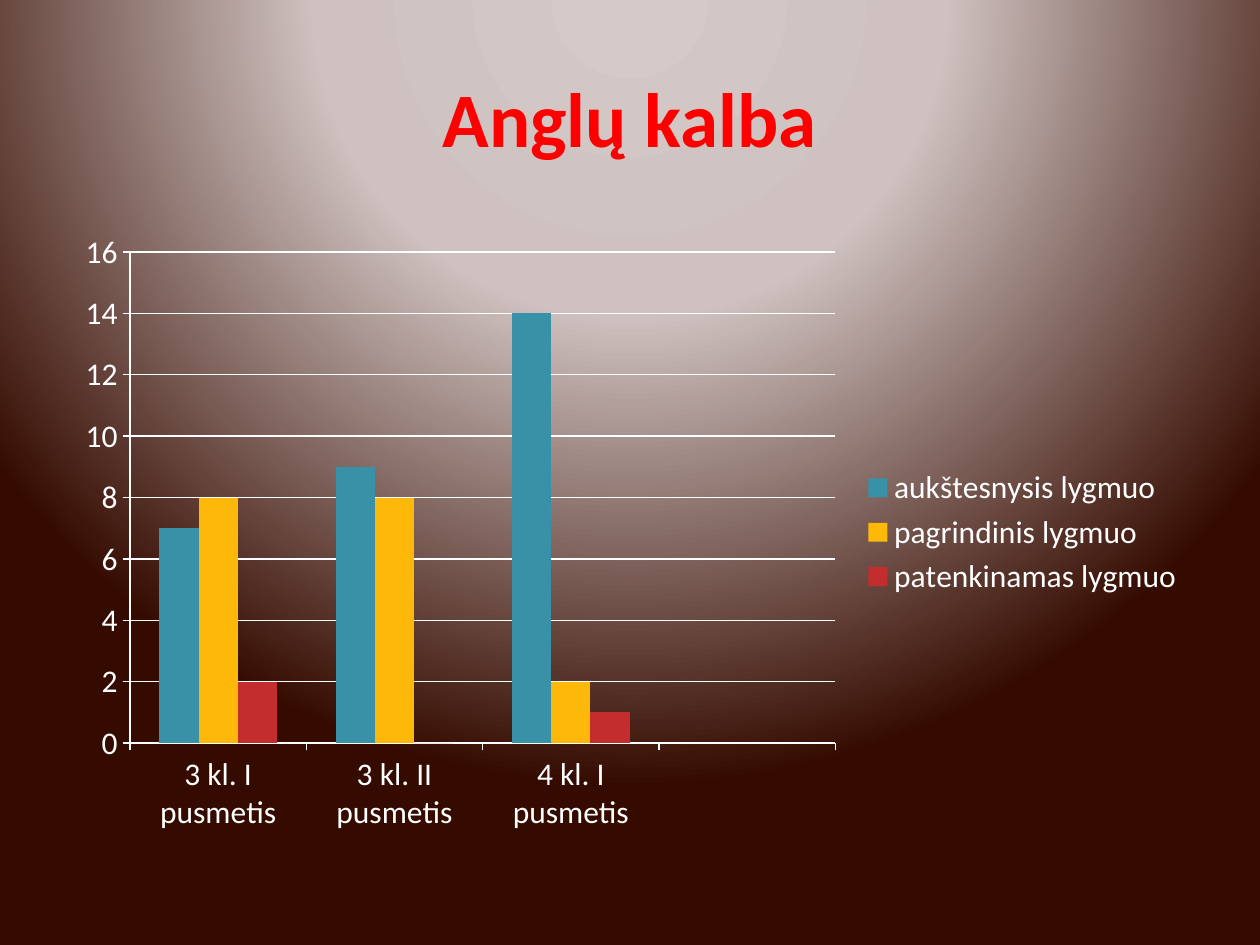
import pptx
import pptx.chart.data
import pptx.dml.color
import pptx.enum.chart
import pptx.enum.text
import pptx.oxml
import pptx.oxml.ns
import pptx.util

Pt = pptx.util.Pt
RGBColor = pptx.dml.color.RGBColor

WHITE = RGBColor(0xFF, 0xFF, 0xFF)
RED = RGBColor(0xFF, 0x00, 0x00)
TEAL = RGBColor(0x38, 0x91, 0xA7)
AMBER = RGBColor(0xFE, 0xB8, 0x0A)
CRIMSON = RGBColor(0xC3, 0x2D, 0x2E)
GLOW = RGBColor(0xD5, 0xCA, 0xC8)
HAZE = RGBColor(0xCE, 0xC1, 0xBF)
BROWN = RGBColor(0x35, 0x0B, 0x00)

FONT = "Calibri"
CATEGORIES = ["3 kl. I pusmetis", "3 kl. II pusmetis", "4 kl. I pusmetis", ""]
LEVELS = [
    ("aukštesnysis lygmuo", (7, 9, 14, None), TEAL),
    ("pagrindinis lygmuo", (8, 8, 2, None), AMBER),
    ("patenkinamas lygmuo", (2, 0, 1, None), CRIMSON),
]


def format_font(font, size, color, bold=False):
    font.name = FONT
    font.size = Pt(size)
    font.bold = bold
    font.color.rgb = color


def set_text(sp, text, size=18, color=WHITE, bold=False,
             align=pptx.enum.text.PP_ALIGN.CENTER):
    tf = sp.text_frame
    tf.vertical_anchor = pptx.enum.text.MSO_ANCHOR.MIDDLE
    p = tf.paragraphs[0]
    p.alignment = align
    r = p.add_run()
    r.text = text
    format_font(r.font, size, color, bold)


def set_background(s, stops):
    """Radial gradient glowing from above the slide."""
    s.background.fill.gradient()
    grad = s.element.find(".//" + pptx.oxml.ns.qn("a:gradFill"))
    stop_xml = "".join(
        f'<a:gs pos="{pos * 1000}"><a:srgbClr val="{color}"/></a:gs>'
        for pos, color in stops)
    grad.getparent().replace(grad, pptx.oxml.parse_xml(
        f'<a:gradFill {pptx.oxml.ns.nsdecls("a")} rotWithShape="1">'
        f'<a:gsLst>{stop_xml}</a:gsLst><a:path path="circle">'
        '<a:fillToRect l="50000" t="-80000" r="50000" b="180000"/>'
        '</a:path></a:gradFill>'))


def add_title(s, text):
    sp = s.shapes.title
    sp.left, sp.top, sp.width, sp.height = Pt(36), Pt(21.6), Pt(648), Pt(90)
    set_text(sp, text, size=44, color=RED, bold=True)


def format_line(line):
    line.color.rgb = WHITE
    line.width = Pt(0.75)


def add_level_chart(s):
    data = pptx.chart.data.CategoryChartData()
    data.categories = CATEGORIES
    for name, values, _ in LEVELS:
        data.add_series(name, values)
    chart = s.shapes.add_chart(
        pptx.enum.chart.XL_CHART_TYPE.COLUMN_CLUSTERED,
        Pt(36), Pt(126), Pt(648), Pt(356.4), data).chart
    chart.has_title = False
    format_font(chart.font, 18, WHITE)

    # Columns
    plot = chart.plots[0]
    plot.gap_width = 150
    plot.overlap = 0
    plot.vary_by_categories = False
    for series, (_, _, color) in zip(plot.series, LEVELS):
        series.format.fill.solid()
        series.format.fill.fore_color.rgb = color

    # Axes
    for axis in (chart.category_axis, chart.value_axis):
        axis.major_tick_mark = pptx.enum.chart.XL_TICK_MARK.OUTSIDE
        format_line(axis.format.line)
    axis = chart.value_axis
    axis.minimum_scale, axis.maximum_scale, axis.major_unit = 0, 16, 2
    axis.has_major_gridlines = True
    format_line(axis.major_gridlines.format.line)

    # Legend
    chart.has_legend = True
    chart.legend.position = pptx.enum.chart.XL_LEGEND_POSITION.RIGHT
    chart.legend.include_in_layout = False


def main():
    prs = pptx.Presentation()
    prs.slide_width, prs.slide_height = Pt(720), Pt(540)
    s = prs.slides.add_slide(prs.slide_layouts[5])
    set_background(s, [(0, GLOW), (40, HAZE), (100, BROWN)])
    add_title(s, "Anglų kalba")
    add_level_chart(s)
    prs.save("out.pptx")


if __name__ == "__main__":
    main()
